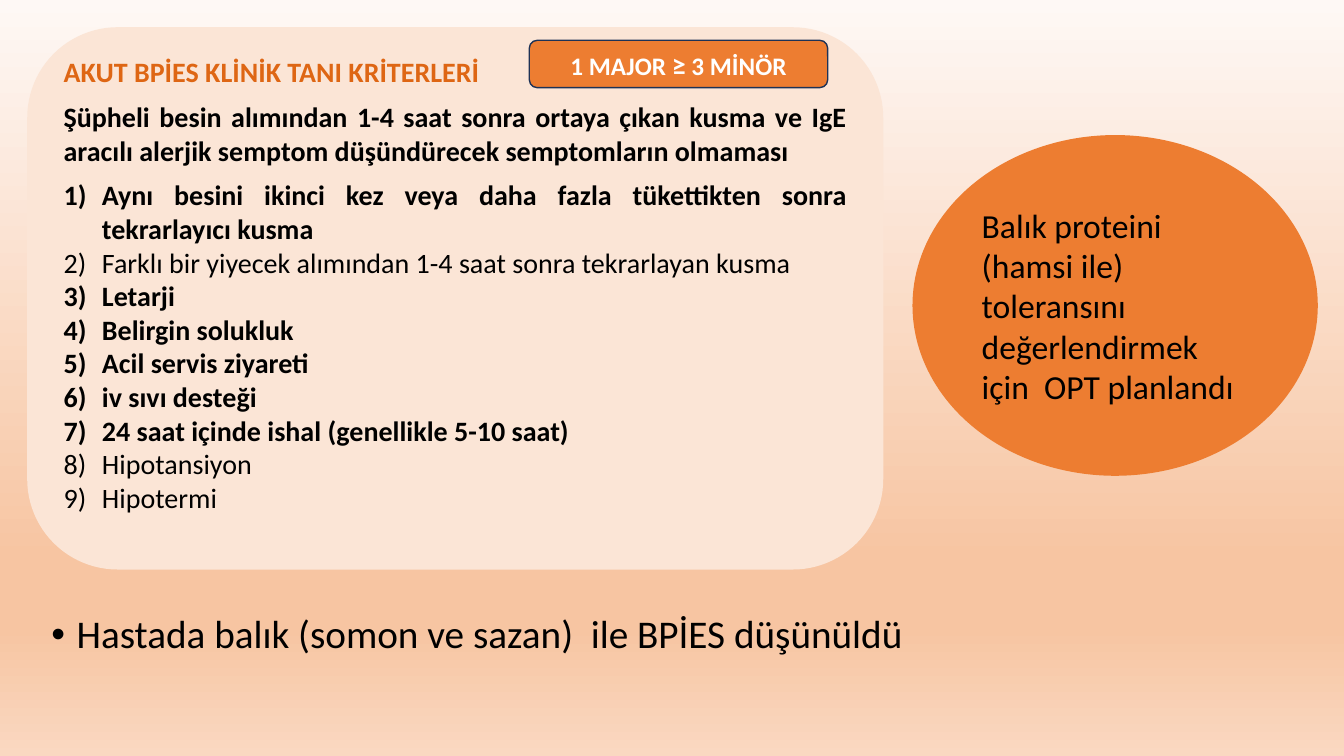
from dataclasses import dataclass
from lxml import etree
from pptx import Presentation
from pptx.dml.color import RGBColor
from pptx.enum.shapes import MSO_SHAPE
from pptx.enum.text import MSO_ANCHOR, MSO_AUTO_SIZE, PP_ALIGN
from pptx.oxml.ns import qn
from pptx.util import Inches, Pt

ROUNDED, OVAL = MSO_SHAPE.ROUNDED_RECTANGLE, MSO_SHAPE.OVAL
TOP, MIDDLE = MSO_ANCHOR.TOP, MSO_ANCHOR.MIDDLE
LEFT, CENTER, JUSTIFY = PP_ALIGN.LEFT, PP_ALIGN.CENTER, PP_ALIGN.JUSTIFY

# Content
HEADING = "AKUT BPİES KLİNİK TANI KRİTERLERİ"
MAJOR = ("Şüpheli besin alımından 1-4 saat sonra ortaya çıkan kusma ve IgE "
         "aracılı alerjik semptom düşündürecek semptomların olmaması")
MINOR = [  # criterion, present in this patient
    ("Aynı besini ikinci kez veya daha fazla tükettikten sonra tekrarlayıcı kusma", True),
    ("Farklı bir yiyecek alımından 1-4 saat sonra tekrarlayan kusma", False),
    ("Letarji", True),
    ("Belirgin solukluk", True),
    ("Acil servis ziyareti", True),
    ("iv sıvı desteği", True),
    ("24 saat içinde ishal (genellikle 5-10 saat)", True),
    ("Hipotansiyon", False),
    ("Hipotermi", False),
]
RULE = [("1 MAJOR ", 18), ("≥", 20), (" 3 MİNÖR", 18)]
PLAN = "Balık proteini (hamsi ile) toleransını değerlendirmek için  OPT planlandı"
CONCLUSION = "Hastada balık (somon ve sazan)  ile BPİES düşünüldü"


@dataclass(frozen=True)
class Theme:
    font: str = "Calibri"
    text: str = "000000"
    light: str = "FFFFFF"
    heading: str = "DE6614"
    panel: str = "FBE5D6"
    accent: str = "ED7D31"
    outline: str = "1E3256"
    backdrop: tuple = ((0, "FEF8F5"), (74, "F7C5A2"), (83, "F7C5A2"), (100, "FAD8C1"))
    criteria_size: int = 20
    plan_size: int = 24
    conclusion_size: int = 28


THEME = Theme()

# Places: left, top, width, height in inches
PANEL_BOX = (0.27, 0.27, 8.49, 5.38)
RULE_BOX = (5.25, 0.4, 2.96, 0.47)
PLAN_BOX = (9.05, 1.34, 4.02, 3.38)
CONCLUSION_BOX = (0.41, 6.05, 9.66, 1.69)


def write(frame, content, size=None, color=THEME.text, bold=False, align=LEFT,
          after=0, hang=0, numbered=False, spacing=None):
    """Add one paragraph; content is a string or (string, size) pairs."""
    first = frame.paragraphs[0]
    paragraph = frame.add_paragraph() if first.runs else first
    props = paragraph._p.get_or_add_pPr()
    if hang:
        props.set("marL", str(Inches(hang)))
        props.set("indent", str(-Inches(hang)))
    if numbered:
        etree.SubElement(props, qn("a:buFont"), typeface="+mj-lt")
        etree.SubElement(props, qn("a:buAutoNum"), type="arabicParenR")
    paragraph.alignment = align
    paragraph.space_before, paragraph.space_after = Pt(0), Pt(after)
    if spacing:
        paragraph.line_spacing = spacing
    for words, points in [(content, size)] if isinstance(content, str) else content:
        run = paragraph.add_run()
        run.text = words
        run.font.name, run.font.size, run.font.bold = THEME.font, Pt(points), bold
        run.font.color.rgb = RGBColor.from_string(color)


def add_panel(slide, kind, box, fill, outline=None, anchor=MIDDLE):
    panel = slide.shapes.add_shape(kind, *map(Inches, box))
    panel.shadow.inherit = False
    panel.fill.solid()
    panel.fill.fore_color.rgb = RGBColor.from_string(fill)
    if outline:
        panel.line.color.rgb = RGBColor.from_string(outline)
        panel.line.width = Pt(1)
    else:
        panel.line.fill.background()
    panel.text_frame.word_wrap = True
    panel.text_frame.vertical_anchor = anchor
    return panel.text_frame


def paint_backdrop(slide):
    fill = slide.background.fill
    fill.gradient()
    fill.gradient_angle = 270
    stops = slide.background._cSld.find(".//" + qn("a:gsLst"))
    for stop in list(stops):
        stops.remove(stop)
    for share, color in THEME.backdrop:
        stop = etree.SubElement(stops, qn("a:gs"), pos=str(share * 1000))
        etree.SubElement(stop, qn("a:srgbClr"), val=color)


def main():
    deck = Presentation()
    deck.slide_width, deck.slide_height = Inches(13.33), Inches(7.5)
    slide = deck.slides.add_slide(deck.slide_layouts[1])
    paint_backdrop(slide)
    title = slide.shapes.title
    title._element.getparent().remove(title._element)

    # Conclusion
    conclusion = slide.placeholders[1]
    conclusion.left, conclusion.top, conclusion.width, conclusion.height = map(
        Inches, CONCLUSION_BOX)
    conclusion.text_frame.auto_size = MSO_AUTO_SIZE.NONE
    write(conclusion.text_frame, CONCLUSION, size=THEME.conclusion_size,
          hang=0.25, spacing=0.9)

    # Diagnostic criteria
    criteria = add_panel(slide, ROUNDED, PANEL_BOX, THEME.panel, anchor=TOP)
    criteria.margin_top = Inches(0.01)
    body = {"size": THEME.criteria_size, "align": JUSTIFY}
    write(criteria, HEADING, color=THEME.heading, bold=True, after=8, **body)
    write(criteria, MAJOR, bold=True, after=8, **body)
    for criterion, present in MINOR:
        write(criteria, criterion, bold=present, hang=0.38, numbered=True, **body)

    # Plan and diagnostic rule
    plan = add_panel(slide, OVAL, PLAN_BOX, THEME.accent)
    write(plan, PLAN, size=THEME.plan_size)
    rule = add_panel(slide, ROUNDED, RULE_BOX, THEME.accent, outline=THEME.outline)
    write(rule, RULE, color=THEME.light, bold=True, align=CENTER)

    deck.save("out.pptx")


if __name__ == "__main__":
    main()
